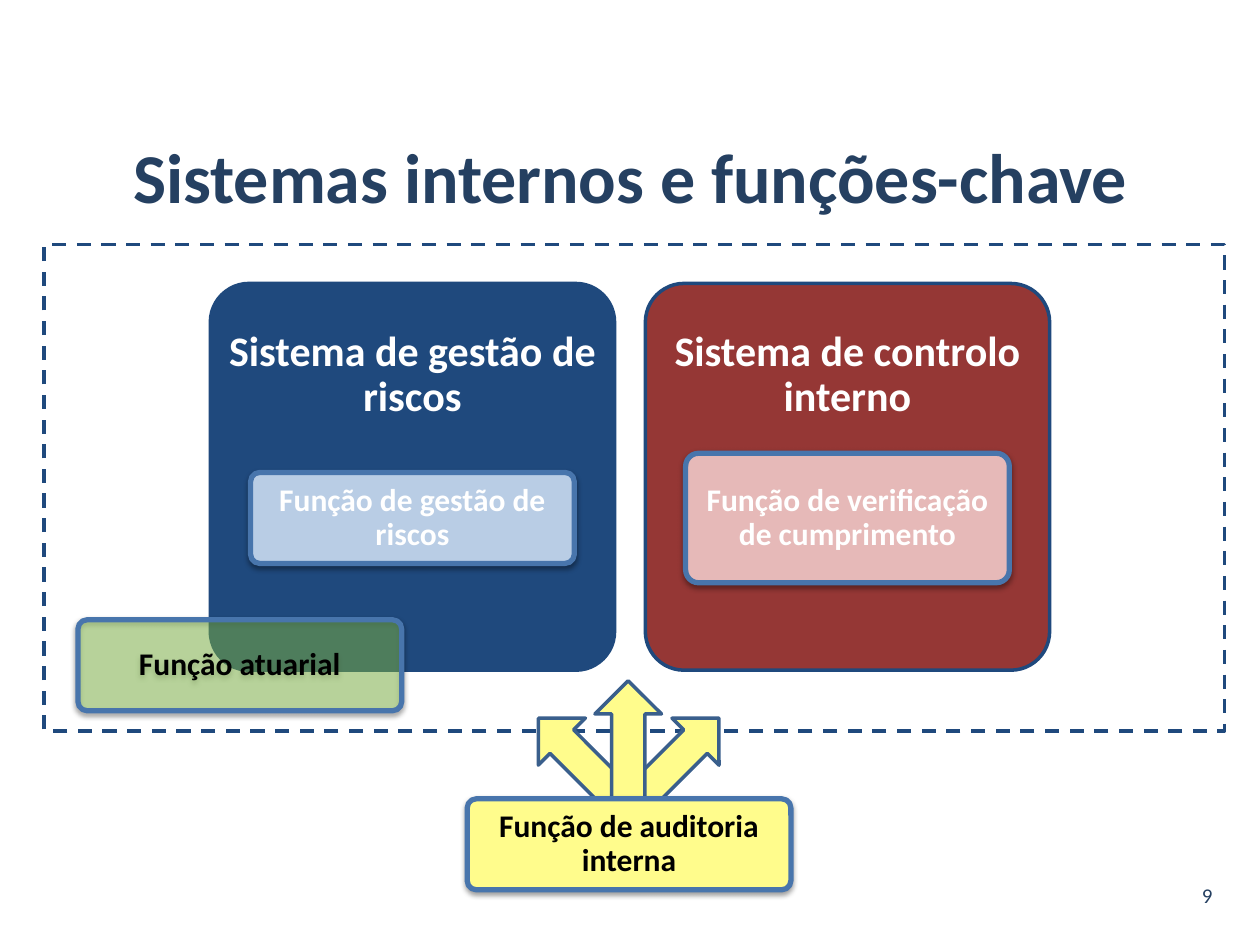
from dataclasses import dataclass

from lxml import etree
from pptx import Presentation
from pptx.dml.color import RGBColor
from pptx.enum.dml import MSO_LINE
from pptx.enum.shapes import MSO_SHAPE
from pptx.enum.text import MSO_ANCHOR, MSO_AUTO_SIZE, PP_ALIGN
from pptx.oxml.ns import qn
from pptx.util import Pt

RECTANGLE = MSO_SHAPE.RECTANGLE
ROUNDED = MSO_SHAPE.ROUNDED_RECTANGLE
UP_ARROW = MSO_SHAPE.UP_ARROW
DASH = MSO_LINE.DASH
TOP, MIDDLE = MSO_ANCHOR.TOP, MSO_ANCHOR.MIDDLE
CENTER, RIGHT = PP_ALIGN.CENTER, PP_ALIGN.RIGHT
NO_AUTOFIT = MSO_AUTO_SIZE.NONE

FONT = "Calibri"
NAVY, WHITE, BLACK = "1F497D", "FFFFFF", "000000"
TITLE_COLOR, LABEL_LINE = "254061", "4875AC"
YELLOW, ARROW_LINE = "FFFC8C", "3A5F8C"
PANEL_TOP, PANEL_WIDTH, PANEL_HEIGHT = 162, 231, 221
LABEL_WIDTH, LABEL_HEIGHT = 185, 52
LABEL_MIDDLE = 296
ARROW_WIDTH, ARROW_HEIGHT = 38, 67.5


@dataclass
class Panel:
    text: str
    left: float
    fill: str


@dataclass
class Label:
    text: str
    left: float
    top: float
    fill: str
    color: str
    height: float = LABEL_HEIGHT
    opacity: int = 100


@dataclass
class Arrow:
    left: float
    top: float
    rotation: float


PANELS = [
    Panel("Sistema de gestão de riscos", 120.2, NAVY),
    Panel("Sistema de controlo interno", 368.8, "953735"),
]
LABELS = [
    Label("Função de gestão de riscos", 143.2, LABEL_MIDDLE - 26, "B9CDE5", WHITE),
    Label("Função de verificação de cumprimento", 391.8, LABEL_MIDDLE - 37,
          "E6B9B8", WHITE, height=74),
    Label("Função atuarial", 44.6, 354.2, "92D050", BLACK, opacity=44),
]
ARROWS = [Arrow(312.5, 400.5, -45), Arrow(368, 400.5, 45), Arrow(340, 389, 0)]
AUDIT = Label("Função de auditoria interna", 267, 456.5, YELLOW, BLACK)


def rgb(color: str) -> RGBColor:
    return RGBColor.from_string(color)


def add_shape(page, kind, left: float, top: float, width: float, height: float,
              fill: str | None, line: str, weight: float):
    shape = page.shapes.add_shape(kind, Pt(left), Pt(top), Pt(width), Pt(height))
    shape.shadow.inherit = False
    if fill:
        shape.fill.solid()
        shape.fill.fore_color.rgb = rgb(fill)
    else:
        shape.fill.background()
    shape.line.color.rgb = rgb(line)
    shape.line.width = Pt(weight)
    if kind == ROUNDED:
        shape.adjustments[0] = 0.1
    return shape


def write_text(shape, text: str, size: float, color: str, bold: bool = True,
               align=CENTER, anchor=MIDDLE, side: float = 7.2,
               above: float = 3.6, below: float = 3.6, spacing: float = 1) -> None:
    frame = shape.text_frame
    frame.word_wrap = True
    frame.auto_size = NO_AUTOFIT
    frame.vertical_anchor = anchor
    frame.margin_left = frame.margin_right = Pt(side)
    frame.margin_top, frame.margin_bottom = Pt(above), Pt(below)
    paragraph = frame.paragraphs[0]
    paragraph.alignment = align
    paragraph.line_spacing = spacing
    span = paragraph.add_run()
    span.text = text
    span.font.name = FONT
    span.font.size = Pt(size)
    span.font.bold = bold
    span.font.color.rgb = rgb(color)


def add_alpha(color_element, percent: int) -> None:
    etree.SubElement(color_element, qn("a:alpha"), val=str(percent * 1000))


def add_shadow(shape) -> None:
    effects = shape._element.spPr.find(qn("a:effectLst"))
    shadow = etree.SubElement(
        effects, qn("a:outerShdw"), blurRad=str(Pt(3.1)), dist=str(Pt(1.6)),
        dir="5400000", rotWithShape="0")
    add_alpha(etree.SubElement(shadow, qn("a:srgbClr"), val=BLACK), 38)


def draw_panel(page, panel: Panel) -> None:
    shape = add_shape(page, ROUNDED, panel.left, PANEL_TOP, PANEL_WIDTH,
                      PANEL_HEIGHT, panel.fill, NAVY, 2)
    write_text(shape, panel.text, 24, WHITE, anchor=TOP, side=3, above=20, spacing=0.9)


def draw_label(page, label: Label) -> None:
    shape = add_shape(page, ROUNDED, label.left, label.top, LABEL_WIDTH,
                      label.height, label.fill, LABEL_LINE, 3)
    if label.opacity < 100:
        fill = shape._element.spPr.find(qn("a:solidFill"))
        add_alpha(fill.find(qn("a:srgbClr")), label.opacity)
    add_shadow(shape)
    write_text(shape, label.text, 18, label.color, side=3.6, spacing=0.9)


def draw_arrow(page, arrow: Arrow) -> None:
    shape = add_shape(page, UP_ARROW, arrow.left, arrow.top, ARROW_WIDTH,
                      ARROW_HEIGHT, YELLOW, ARROW_LINE, 2)
    shape.rotation = arrow.rotation


def main() -> None:
    deck = Presentation()
    deck.slide_width, deck.slide_height = Pt(720), Pt(540)
    page = deck.slides.add_slide(deck.slide_layouts[5])

    title = page.shapes.title
    title.left, title.top, title.width, title.height = Pt(20), Pt(80), Pt(680.5), Pt(41)
    write_text(title, "Sistemas internos e funções-chave", 40, TITLE_COLOR)

    number = page.shapes.add_textbox(Pt(532), Pt(497), Pt(168), Pt(29))
    write_text(number, "9", 12, TITLE_COLOR, bold=False, align=RIGHT)

    frame = add_shape(page, RECTANGLE, 25.2, 139.7, 674.6, 278, None, NAVY, 2)
    frame.line.dash_style = DASH

    for panel in PANELS:
        draw_panel(page, panel)
    for label in LABELS:
        draw_label(page, label)
    for arrow in ARROWS:
        draw_arrow(page, arrow)
    draw_label(page, AUDIT)

    deck.save("out.pptx")


if __name__ == "__main__":
    main()
